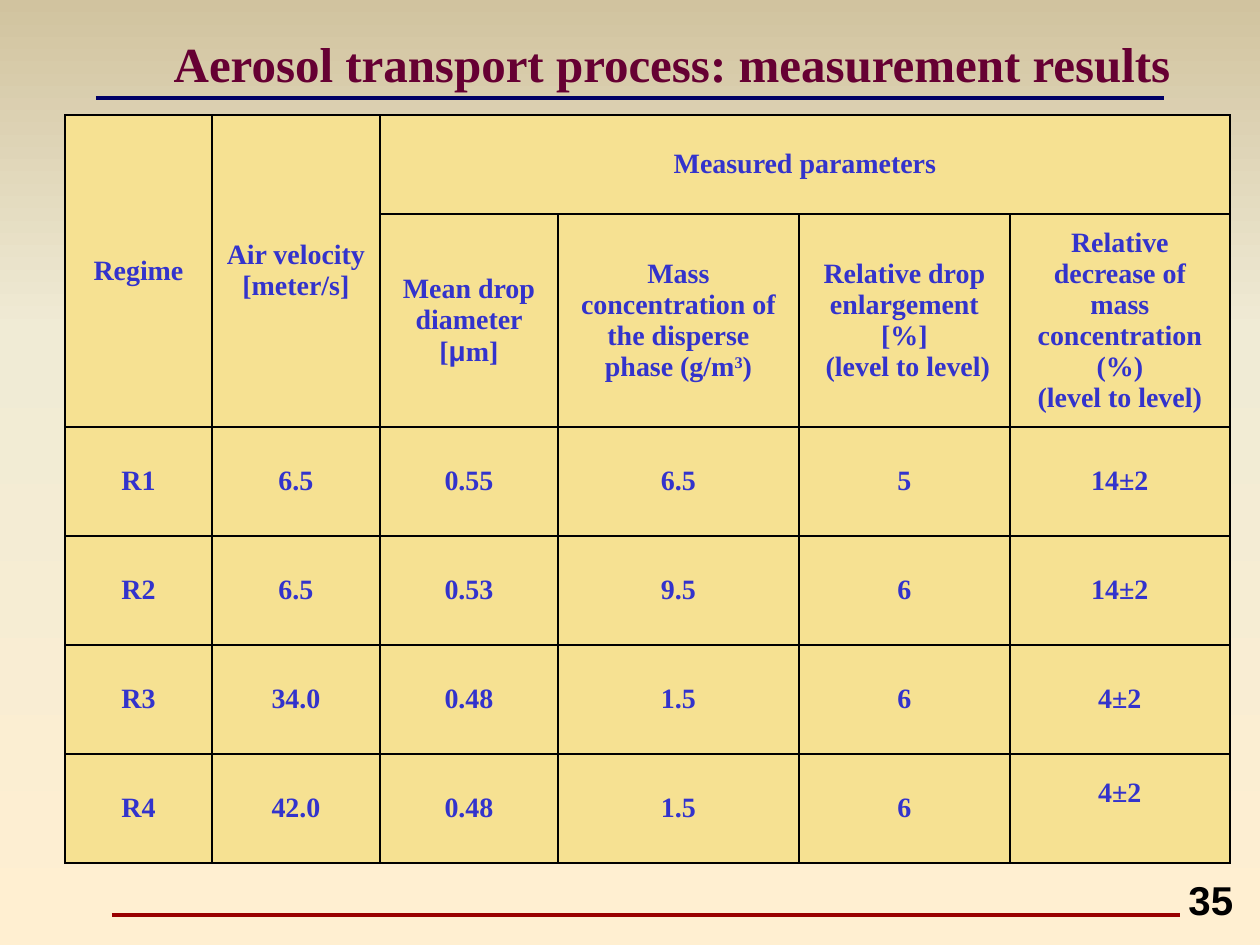
from copy import deepcopy
from dataclasses import dataclass

from lxml import etree
from pptx import Presentation
from pptx.dml.color import RGBColor
from pptx.enum.shapes import MSO_CONNECTOR
from pptx.enum.text import MSO_ANCHOR, MSO_AUTO_SIZE, PP_ALIGN
from pptx.oxml.ns import qn
from pptx.util import Pt

STRAIGHT = MSO_CONNECTOR.STRAIGHT
MIDDLE = MSO_ANCHOR.MIDDLE
NO_FIT = MSO_AUTO_SIZE.NONE
CENTER, LEFT = PP_ALIGN.CENTER, PP_ALIGN.LEFT
EMU_PER_PX = 914400 / 126


@dataclass(frozen=True)
class Style:
    name: str
    size: int
    color: str


@dataclass(frozen=True)
class Theme:
    title: Style = Style("Times New Roman", 28, "660033")
    cell: Style = Style("Times New Roman", 16, "3333CC")
    number: Style = Style("Arial", 23, "000000")
    symbol_font: str = "Arial"
    cell_fill: str = "F6E192"
    border: str = "000000"
    border_pt: int = 1
    rule_pt: float = 2.25
    background: tuple = ((0, "D1C39F"), (0.35, "F0EBD5"), (1, "FFEFD1"))


@dataclass(frozen=True)
class Run:
    text: str
    name: str = ""
    baseline: int = 0


@dataclass(frozen=True)
class Rule:
    x1: int
    x2: int
    y: int
    color: str


@dataclass(frozen=True)
class Header:
    row: int
    col: int
    paragraphs: tuple
    last_row: int
    last_col: int


THEME = Theme()
RULES = (Rule(96, 1164, 98, "000066"), Rule(112, 1180, 915, "990000"))
COLS = (147, 168, 178, 241, 211, 220)
ROWS = (99, 213) + (109,) * 4
HEADERS = (
    Header(0, 0, ("Regime",), 1, 0),
    Header(0, 1, ("Air velocity [meter/s]",), 1, 1),
    Header(0, 2, ("Measured parameters",), 0, 5),
    Header(1, 2, ((Run("Mean drop diameter ["), Run("μ", THEME.symbol_font), Run("m]")),), 1, 2),
    Header(1, 3, ((Run("Mass concentration of the disperse phase (g/m"),
                   Run("3", baseline=30000), Run(")")),), 1, 3),
    Header(1, 4, ("Relative drop enlargement [%]", " (level to level)"), 1, 4),
    Header(1, 5, ("Relative decrease of mass concentration", "(%)", "(level to level)"), 1, 5),
)
RESULTS = (
    ("R1", "6.5", "0.55", "6.5", "5", "14±2"),
    ("R2", "6.5", "0.53", "9.5", "6", "14±2"),
    ("R3", "34.0", "0.48", "1.5", "6", "4±2"),
    ("R4", "42.0", "0.48", "1.5", "6", "4±2"),
)


def px(n: int) -> int:
    return round(n * EMU_PER_PX)


def set_attrs(obj, values: dict) -> None:
    for key, value in values.items():
        setattr(obj, key, value)


def write(tf, paragraphs: tuple, style: Style, align=CENTER) -> None:
    for i, content in enumerate(paragraphs):
        p = tf.paragraphs[0] if i == 0 else tf.add_paragraph()
        p.alignment = align
        for run in (Run(content),) if isinstance(content, str) else content:
            r = p.add_run()
            r.text = run.text
            set_attrs(r.font, {"name": run.name or style.name, "size": Pt(style.size), "bold": True})
            r.font.color.rgb = RGBColor.from_string(style.color)
            if run.baseline:
                r.font._element.set("baseline", str(run.baseline))


def paint_background(s) -> None:
    fill = s.background.fill
    fill.gradient()
    fill.gradient_angle = 270
    stops = s._element.find(".//" + qn("a:gsLst"))
    stops.append(deepcopy(stops[-1]))
    for stop, (position, color) in zip(fill.gradient_stops, THEME.background):
        stop.position = position
        stop.color.rgb = RGBColor.from_string(color)


def add_rule(s, rule: Rule) -> None:
    line = s.shapes.add_connector(STRAIGHT, px(rule.x1), px(rule.y), px(rule.x2), px(rule.y))
    line.line.width = Pt(THEME.rule_pt)
    line.line.color.rgb = RGBColor.from_string(rule.color)
    etree.SubElement(line._element.spPr, qn("a:effectLst"))


def format_cell(cell) -> None:
    cell.vertical_anchor = MIDDLE
    cell.fill.solid()
    cell.fill.fore_color.rgb = RGBColor.from_string(THEME.cell_fill)
    tc_pr = cell._tc.get_or_add_tcPr()
    for i, side in enumerate(("lnL", "lnR", "lnT", "lnB")):
        ln = etree.Element(qn(f"a:{side}"), w=str(Pt(THEME.border_pt)))
        solid = etree.SubElement(ln, qn("a:solidFill"))
        etree.SubElement(solid, qn("a:srgbClr"), val=THEME.border)
        tc_pr.insert(i, ln)


def add_results_table(s) -> None:
    table = s.shapes.add_table(len(ROWS), len(COLS), px(65), px(115),
                               px(sum(COLS)), px(sum(ROWS))).table
    for column, width in zip(table.columns, COLS):
        column.width = px(width)
    for row, height in zip(table.rows, ROWS):
        row.height = px(height)
    for cell in table.iter_cells():
        format_cell(cell)
    for h in HEADERS:
        cell = table.cell(h.row, h.col)
        if (h.row, h.col) != (h.last_row, h.last_col):
            cell.merge(table.cell(h.last_row, h.last_col))
        write(cell.text_frame, h.paragraphs, THEME.cell)
    for i, values in enumerate(RESULTS, start=2):
        for j, value in enumerate(values):
            write(table.cell(i, j).text_frame, (value,), THEME.cell)
    table.cell(len(ROWS) - 1, len(COLS) - 1).margin_bottom = px(36)


def add_title(s) -> None:
    title = s.shapes.title
    set_attrs(title, {"left": px(84), "top": px(27), "width": px(1176), "height": px(72)})
    set_attrs(title.text_frame, {"vertical_anchor": MIDDLE, "auto_size": NO_FIT, "word_wrap": True})
    write(title.text_frame, ("Aerosol transport process: measurement results",), THEME.title)


def add_number(s) -> None:
    tf = s.shapes.add_textbox(px(1176), px(869), px(70), px(60)).text_frame
    tf.word_wrap = False
    write(tf, ("35",), THEME.number, LEFT)


def main() -> None:
    prs = Presentation()
    set_attrs(prs, {"slide_width": px(1260), "slide_height": px(945)})
    s = prs.slides.add_slide(prs.slide_layouts[5])
    paint_background(s)
    for rule in RULES:
        add_rule(s, rule)
    add_results_table(s)
    add_title(s)
    add_number(s)
    prs.save("out.pptx")


if __name__ == "__main__":
    main()
